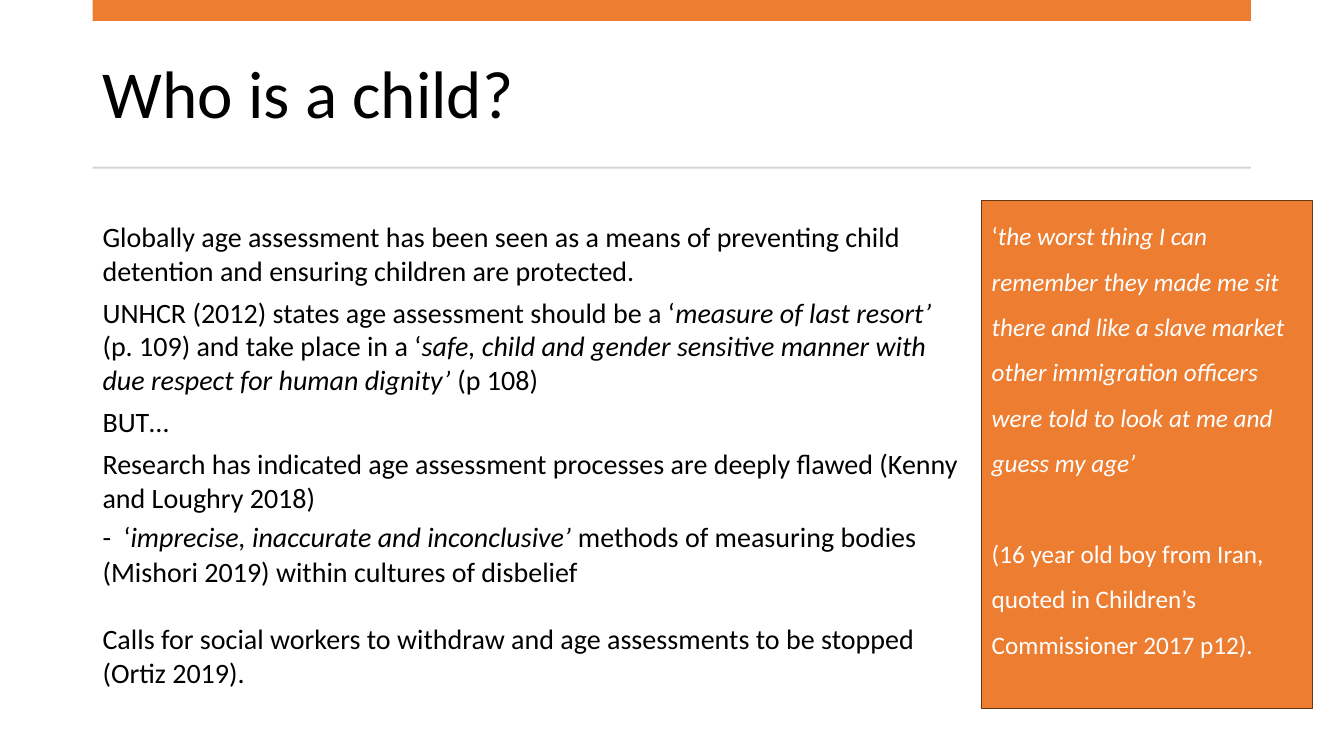
from dataclasses import dataclass

from lxml import etree
from pptx import Presentation
from pptx import util as u
from pptx.dml import color
from pptx.enum import shapes, text
from pptx.oxml import ns


@dataclass(frozen=True)
class Theme:
    font: str = "Calibri"
    ink: str = "000000"
    paper: str = "FFFFFF"
    accent: str = "ED7D31"
    edge: str = "683715"
    rule: str = "D5D5D5"
    title: int = 48
    body: int = 20
    gap: int = 24
    quote: int = 18


THEME = Theme()


def rgb(code):
    return color.RGBColor.from_string(code)


def block(slide, box, fill, edge=None):
    """Plain rectangle in box (left, top, width, height)."""
    shape = slide.shapes.add_shape(
        shapes.MSO_SHAPE.RECTANGLE, *(u.Pt(n) for n in box))
    shape.shadow.inherit = False
    shape.fill.solid()
    shape.fill.fore_color.rgb = rgb(fill)
    if edge:
        shape.line.color.rgb = rgb(edge)
        shape.line.width = u.Pt(1)
    else:
        shape.line.fill.background()
    return shape


def write(frame, runs, size, ink, first=False, before=0, after=0, lead=1.0, tab=None):
    """Add one paragraph; each run is (words, italic) or (words, italic, size)."""
    para = frame.paragraphs[0] if first else frame.add_paragraph()
    para.alignment = text.PP_ALIGN.LEFT
    para.line_spacing = lead
    para.space_before, para.space_after = u.Pt(before), u.Pt(after)
    if tab:
        stops = etree.SubElement(para._p.get_or_add_pPr(), ns.qn("a:tabLst"))
        etree.SubElement(stops, ns.qn("a:tab"), pos=str(u.Pt(tab)), algn="l")
    for words, slant, *own in runs:
        run = para.add_run()
        run.text = words
        run.font.name = THEME.font
        run.font.size = u.Pt(own[0] if own else size)
        run.font.italic = slant
        run.font.color.rgb = rgb(ink)


def setup(frame, anchor):
    frame.word_wrap = True
    frame.vertical_anchor = anchor
    return frame


def header(slide, box):
    """Accent bar on top, title in the middle, thin rule below."""
    left, top, width, height = box
    block(slide, (left, top, width, 15), THEME.accent)
    block(slide, (left, top + height - 1.5, width, 1.5), THEME.rule)
    title = slide.shapes.add_textbox(
        u.Pt(left), u.Pt(top + 26.6), u.Pt(width), u.Pt(85))
    frame = setup(title.text_frame, text.MSO_ANCHOR.MIDDLE)
    write(frame, [("Who is a child?", False)], THEME.title, THEME.ink,
          first=True, lead=0.9)


def body(slide, box):
    """Main argument on white."""
    frame = setup(block(slide, box, THEME.paper).text_frame, text.MSO_ANCHOR.TOP)
    paras = [
        ([("Globally age assessment has been seen as a means of preventing child "
           "detention and ensuring children are protected.", False)],
         dict(first=True, after=6)),
        ([("UNHCR (2012) states age assessment should be a ‘", False),
          ("measure of last resort’ ", True),
          ("(p. 109) and take place in a ‘", False),
          ("safe, child and gender sensitive manner with due respect for "
           "human dignity’ ", True),
          ("(p 108)", False)], dict(after=6)),
        ([("BUT…", False)], dict(after=6)),
        ([("Research has indicated age assessment processes are deeply flawed "
           "(Kenny and Loughry 2018)", False)], {}),
        ([("-\t‘", False),
          ("imprecise, inaccurate and inconclusive’ ", True),
          ("methods of measuring bodies", False),
          (" ", False, THEME.gap),
          ("(Mishori 2019) within cultures of disbelief", False)], dict(tab=15)),
        ([("Calls for social workers to withdraw and age assessments to be "
           "stopped (Ortiz 2019).", False)], dict(before=24)),
    ]
    for runs, form in paras:
        write(frame, runs, THEME.body, THEME.ink, **form)


def quote(slide, box):
    """Quotation and its source in an accent panel."""
    panel = block(slide, box, THEME.accent, THEME.edge)
    frame = setup(panel.text_frame, text.MSO_ANCHOR.TOP)
    write(frame, [("‘", False),
                  ("the worst thing I can remember they made me sit there and like "
                   "a slave market other immigration officers were told to look at "
                   "me and guess my age’", True)],
          THEME.quote, THEME.paper, first=True, lead=1.5)
    write(frame, [("(16 year old boy from Iran, quoted in Children’s "
                   "Commissioner 2017 p12).", False)],
          THEME.quote, THEME.paper, before=32.5, lead=1.5)


def main():
    deck = Presentation()
    deck.slide_width, deck.slide_height = u.Pt(960), u.Pt(540)
    slide = deck.slides.add_slide(deck.slide_layouts[6])
    header(slide, (66.2, 0, 827.3, 120.5))
    body(slide, (66.2, 153.4, 629.3, 345.6))
    quote(slide, (701.3, 143.3, 236.2, 362.9))
    deck.save("out.pptx")


if __name__ == "__main__":
    main()
